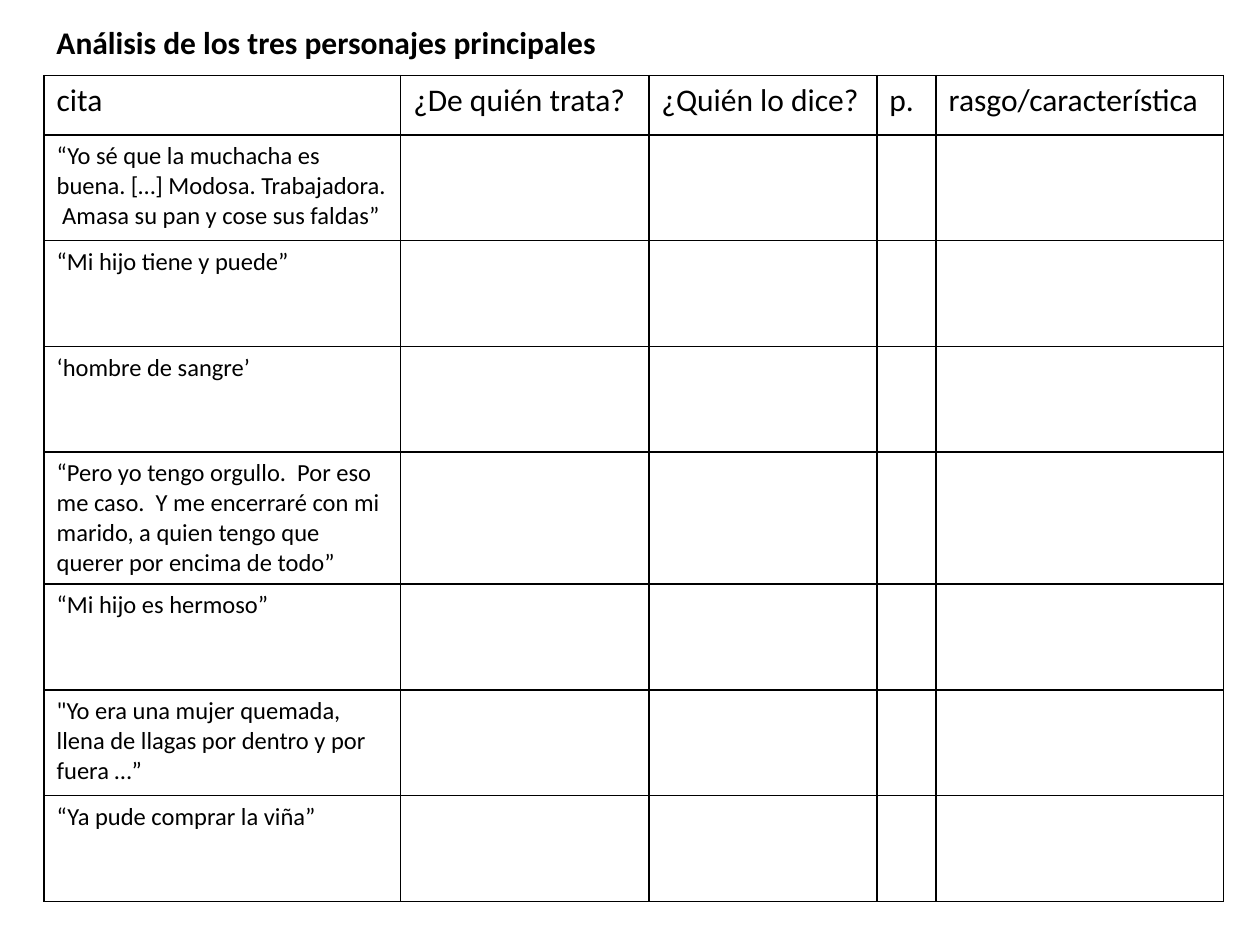
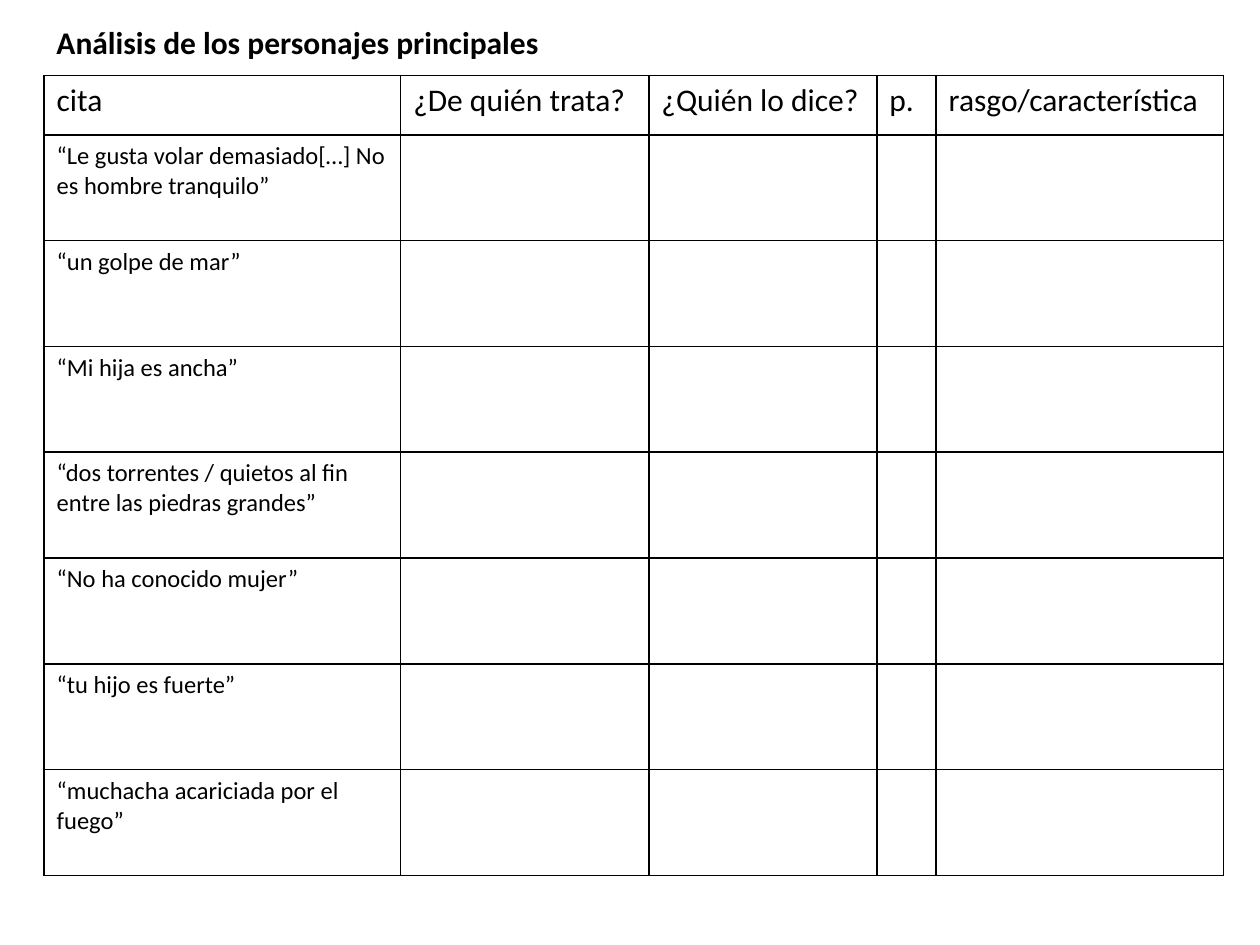
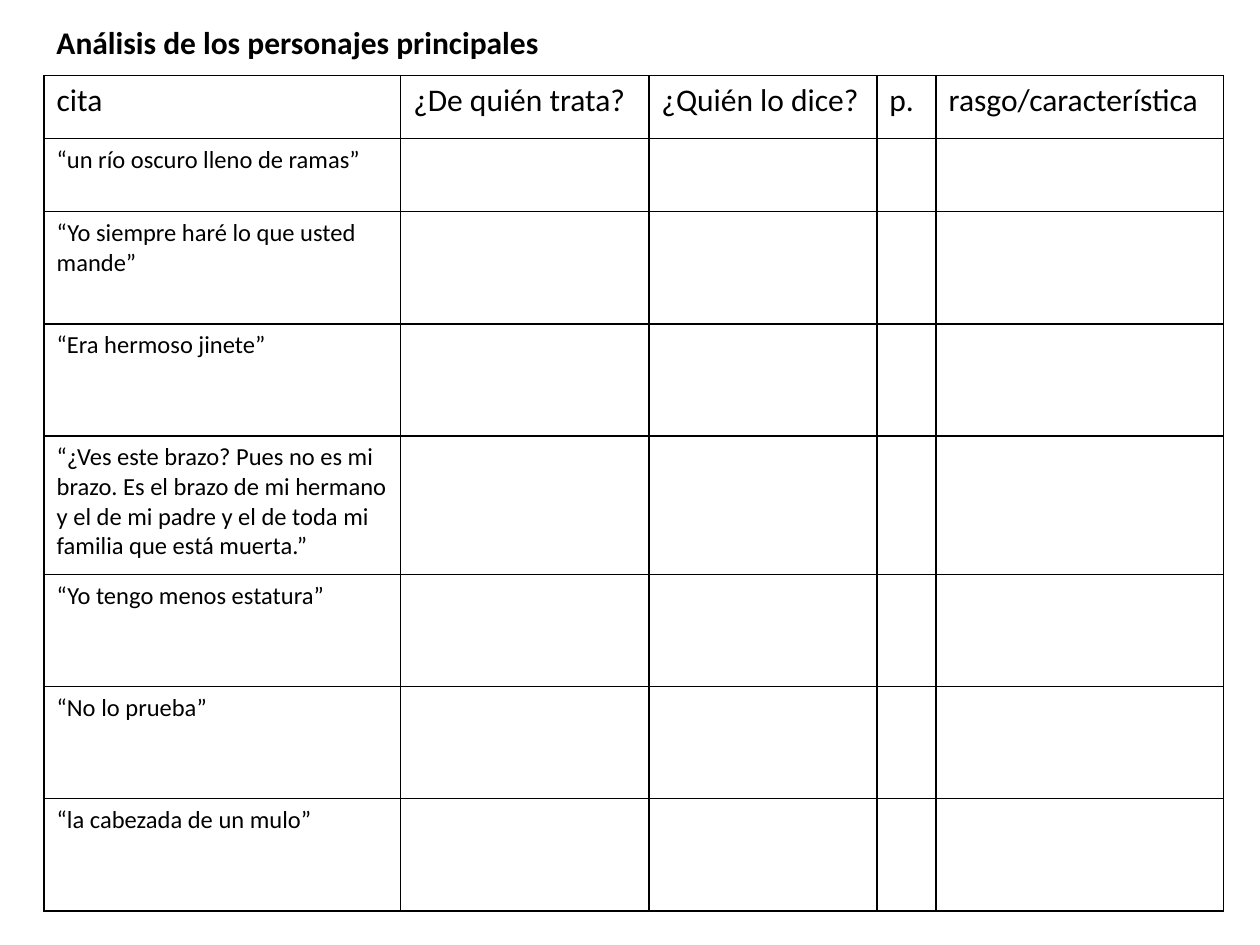
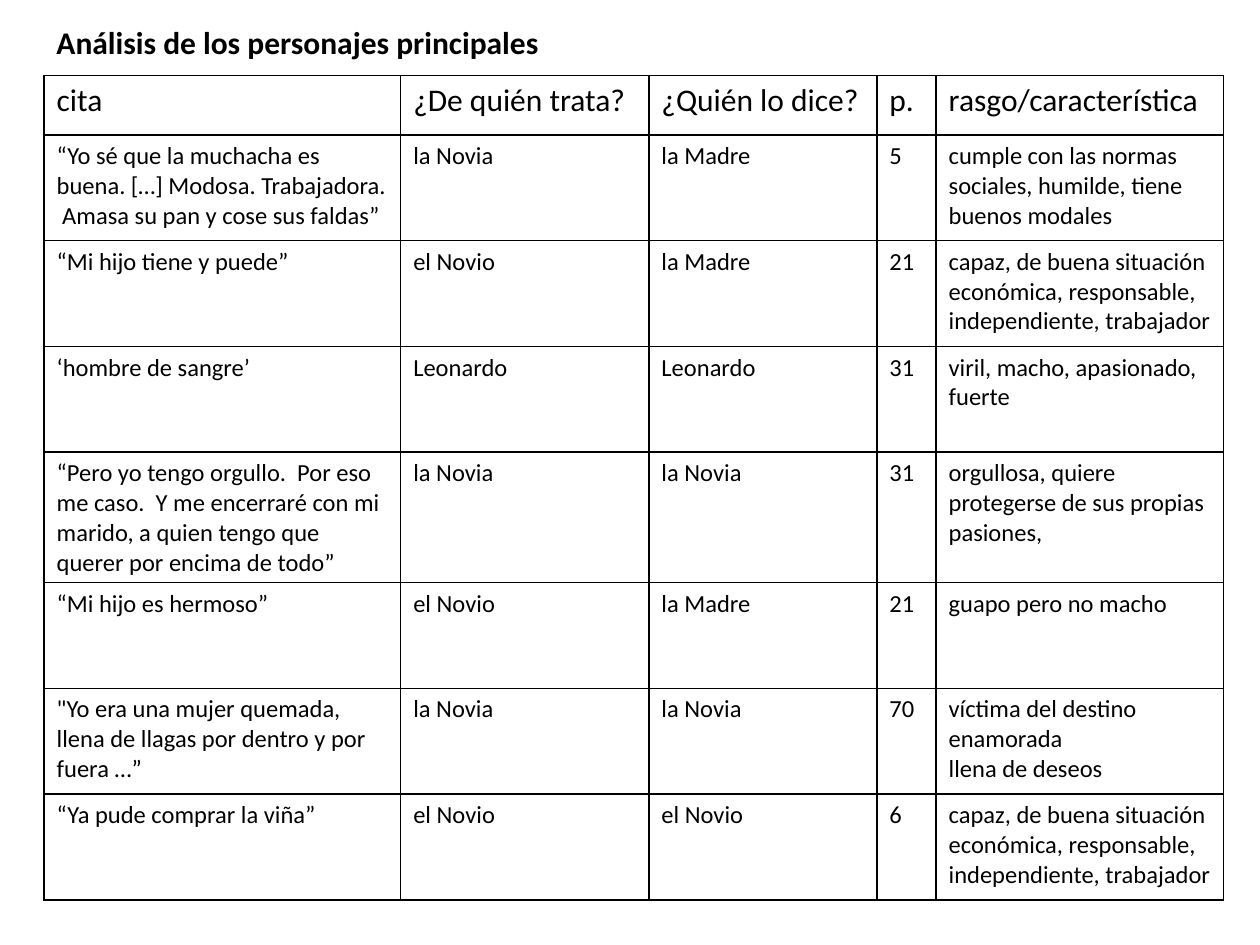
"""Build four slides of quotation tables about the main characters."""
import itertools
from dataclasses import dataclass

import lxml.etree
import pptx
import pptx.dml.color
import pptx.enum.text
import pptx.oxml.ns
import pptx.util

PX = 9144
FONT = "Calibri"
INK = "000000"
LEFT, WIDTH = 35, 937
HEADS = ("cita", "¿De quién trata?", "¿Quién lo dice?", "p.", "rasgo/característica")
COLS = (283, 197, 181, 47, 228)
EVEN = (47,) + (84,) * 7
MIXED = (50, 58, 89, 89, 110, 89, 89, 89)
TITLE = "Análisis de los personajes principales"

FIRST = (
    "“Yo sé que la muchacha es buena. […] Modosa. Trabajadora.  Amasa su pan y cose sus faldas”",
    "“Mi hijo tiene y puede”",
    "‘hombre de sangre’",
    "“Pero yo tengo orgullo.  Por eso me caso.  Y me encerraré con mi marido, "
    "a quien tengo que querer por encima de todo”",
    "“Mi hijo es hermoso”",
    "\"Yo era una mujer quemada, llena de llagas por dentro y por fuera …”",
    "“Ya pude comprar la viña”",
)
SECOND = (
    "“Le gusta volar demasiado[…] No es hombre tranquilo”",
    "“un golpe de mar”",
    "“Mi hija es ancha”",
    "“dos torrentes / quietos al fin entre las piedras grandes”",
    "“No ha conocido mujer”",
    "“tu hijo es fuerte”",
    "“muchacha acariciada por el fuego”",
)
THIRD = (
    "“un río oscuro lleno de ramas”",
    "“Yo siempre haré lo que usted mande”",
    "“Era hermoso jinete”",
    "“¿Ves este brazo? Pues no es mi brazo. Es el brazo de mi hermano "
    "y el de mi padre y el de toda mi familia que está muerta.”",
    "“Yo tengo menos estatura”",
    "“No lo prueba”",
    "“la cabezada de un mulo”",
)
ABLE = "capaz, de buena situación económica, responsable, independiente, trabajador"
ANSWERS = (
    ("la Novia", "la Madre", "5", "cumple con las normas sociales, humilde, tiene buenos modales"),
    ("el Novio", "la Madre", "21", ABLE),
    ("Leonardo", "Leonardo", "31", "viril, macho, apasionado, fuerte"),
    ("la Novia", "la Novia", "31", "orgullosa, quiere protegerse de sus propias pasiones,"),
    ("el Novio", "la Madre", "21", "guapo pero no macho"),
    ("la Novia", "la Novia", "70", "víctima del destino\nenamorada\nllena de deseos"),
    ("el Novio", "el Novio", "6", ABLE),
)


@dataclass(frozen=True)
class Sheet:
    title: str
    quotes: tuple[str, ...]
    rows: tuple[int, ...] = EVEN
    tall: int = 653
    answers: tuple[tuple[str, ...], ...] = ()


SHEETS = (
    Sheet("Análisis de los tres personajes principales", FIRST),
    Sheet(TITLE, SECOND, tall=633),
    Sheet(TITLE, THIRD, rows=MIXED, tall=661),
    Sheet(TITLE, FIRST, answers=ANSWERS),
)


def px(size: int) -> int:
    return pptx.util.Emu(size * PX)


def color(code: str) -> pptx.dml.color.RGBColor:
    return pptx.dml.color.RGBColor.from_string(code)


def write(frame, text: str, *, size: int = 14, bold: bool = False) -> None:
    para = frame.paragraphs[0]
    para.text = text
    for run in para.runs:
        font = run.font
        font.name, font.size, font.bold = FONT, pptx.util.Pt(size), bold
        font.color.rgb = color(INK)


def border(cell) -> None:
    props = cell._tc.get_or_add_tcPr()
    qn = pptx.oxml.ns.qn
    for side in ("a:lnL", "a:lnR", "a:lnT", "a:lnB"):
        line = lxml.etree.SubElement(props, qn(side), w=str(pptx.util.Pt(1)))
        fill = lxml.etree.SubElement(line, qn("a:solidFill"))
        lxml.etree.SubElement(fill, qn("a:srgbClr"), val=INK)


def head(slide, text: str) -> None:
    box = slide.shapes.add_textbox(px(LEFT), px(13), px(WIDTH), px(40))
    frame = box.text_frame
    frame.word_wrap = True
    frame.auto_size = pptx.enum.text.MSO_AUTO_SIZE.SHAPE_TO_FIT_TEXT
    write(frame, text, size=18, bold=True)


def grid(slide, sheet: Sheet) -> None:
    pairs = itertools.zip_longest(sheet.quotes, sheet.answers, fillvalue=())
    lines = [HEADS] + [(quote, *reply) for quote, reply in pairs]
    shape = slide.shapes.add_table(
        len(lines), len(COLS), px(LEFT), px(60), px(WIDTH), px(sheet.tall))
    table = shape.table
    table.first_row = table.horz_banding = False
    for col, wide in zip(table.columns, COLS):
        col.width = px(wide)
    for index, (row, tall, texts) in enumerate(zip(table.rows, sheet.rows, lines)):
        row.height = px(tall)
        for cell, text in itertools.zip_longest(row.cells, texts, fillvalue=""):
            border(cell)
            cell.fill.background()
            if text:
                write(cell.text_frame, text, size=14 if index else 18)
    shape.width, shape.height = px(WIDTH), px(sheet.tall)


def main() -> None:
    deck = pptx.Presentation()
    deck.slide_width, deck.slide_height = px(1000), px(750)
    for sheet in SHEETS:
        slide = deck.slides.add_slide(deck.slide_layouts[6])
        grid(slide, sheet)
        head(slide, sheet.title)
    deck.save("out.pptx")


if __name__ == "__main__":
    main()
